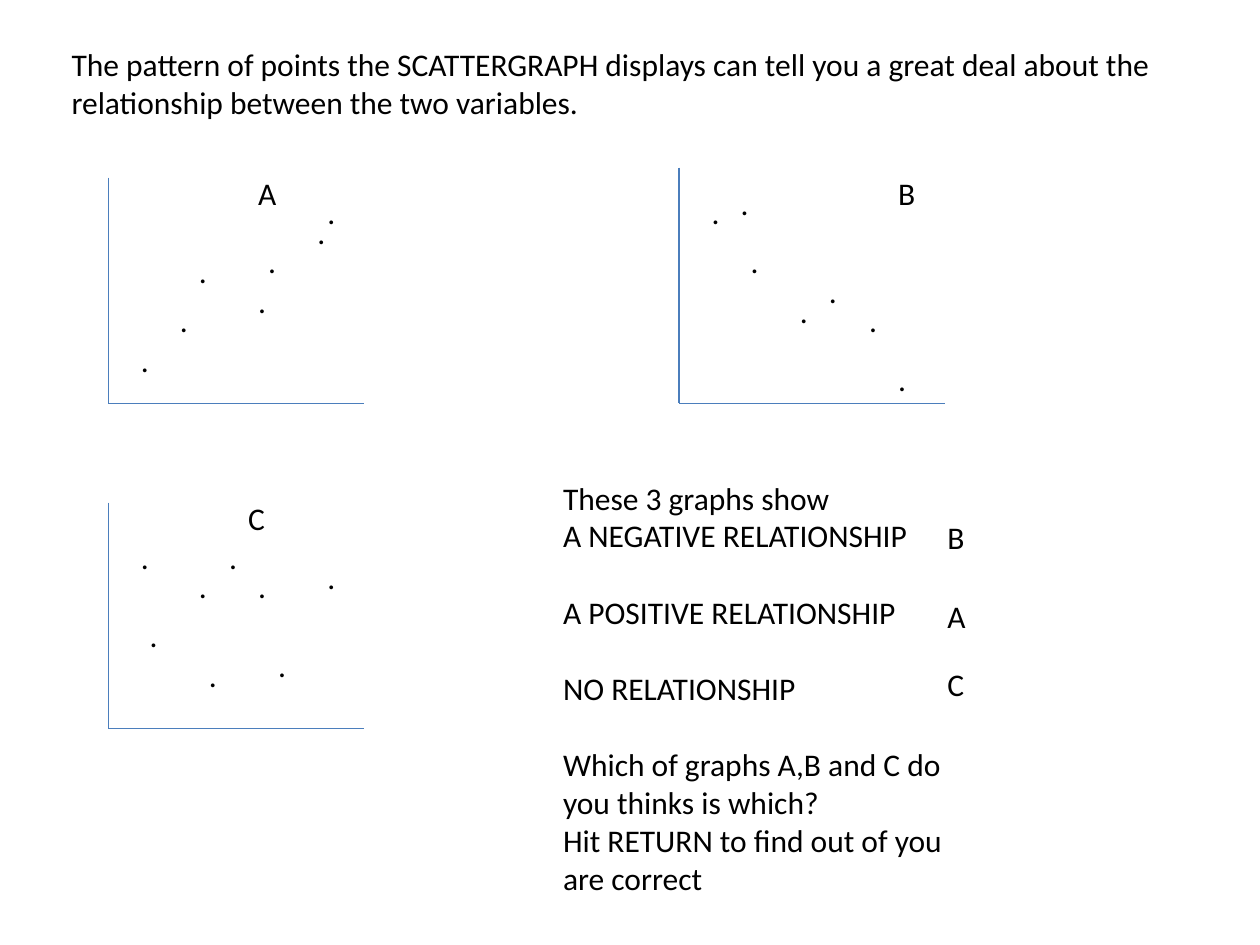
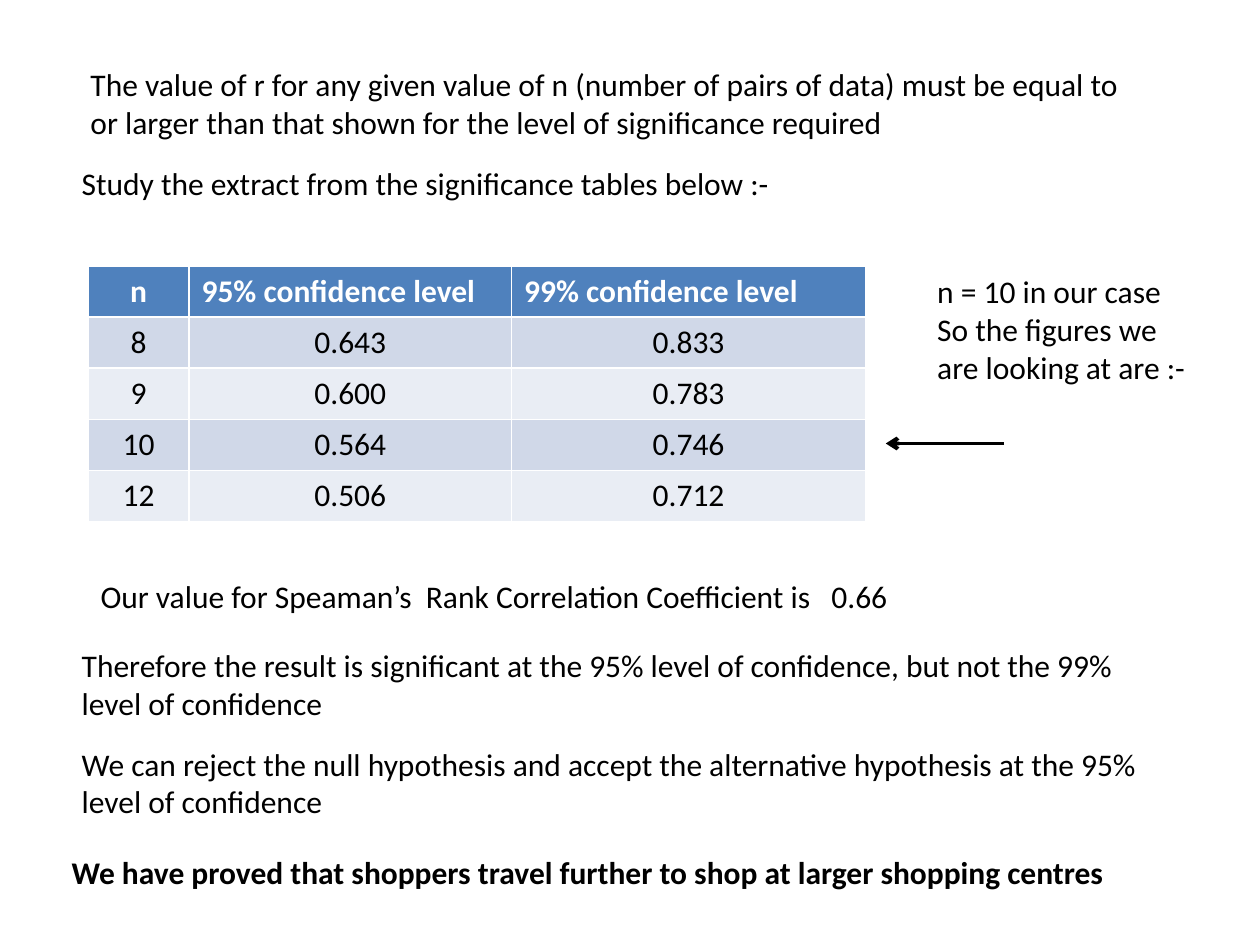
from lxml import etree
from pptx import Presentation
from pptx.dml.color import RGBColor
from pptx.enum.shapes import MSO_CONNECTOR
from pptx.enum.text import MSO_AUTO_SIZE, PP_ALIGN
from pptx.oxml.ns import qn
from pptx.util import Inches, Pt

STRAIGHT = MSO_CONNECTOR.STRAIGHT
FIT_SHAPE = MSO_AUTO_SIZE.SHAPE_TO_FIT_TEXT
LEFT, CENTER = PP_ALIGN.LEFT, PP_ALIGN.CENTER

COLORS = {
    "text": "000000",
    "axis": "4B7EBC",
    "header": "4F81BD",
    "header_text": "FFFFFF",
    "band_dark": "D0D8E8",
    "band_light": "E9EDF4",
}
FONT = "Calibri"
SIZE = 18
LINE_GAP = 22
LINE_H = 0.4
TWO_LINES_H = 0.71

GRAPHS = [
    {"label": ("A", 1.95, 1.33), "origin": (0.86, 3.2), "top": 1.41, "right": 2.89,
     "points": [(1.02, 2.66), (1.33, 2.34), (1.48, 1.95), (1.95, 2.19),
                (2.03, 1.87), (2.42, 1.64), (2.5, 1.48)]},
    {"label": ("B", 7.03, 1.33), "origin": (5.39, 3.2), "top": 1.33, "right": 7.5,
     "points": [(5.55, 1.48), (6.25, 2.27), (6.8, 2.34), (5.86, 1.87),
                (7.03, 2.81), (5.78, 1.41), (6.48, 2.11)]},
    {"label": ("C", 1.87, 3.91), "origin": (0.86, 5.78), "top": 3.99, "right": 2.89,
     "points": [(1.02, 4.22), (2.5, 4.38), (1.56, 5.16), (2.11, 5.08),
                (1.48, 4.45), (1.95, 4.45), (1.09, 4.84), (1.72, 4.22)]},
]
QUIZ = [
    ("These 3 graphs show", 0),
    ("A NEGATIVE RELATIONSHIP", 0),
    ("A POSITIVE RELATIONSHIP", LINE_GAP),
    ("NO RELATIONSHIP", LINE_GAP),
    ("Which of graphs A,B and C do you thinks is which?", LINE_GAP),
    ("Hit RETURN to find out of you are correct", 0),
]
ANSWERS = [("B", 4.06), ("A", 4.69), ("C", 5.23)]
SIGNIFICANCE = [
    ("n", "95% confidence level", "99% confidence level"),
    ("8", "0.643", "0.833"),
    ("9", "0.600", "0.783"),
    ("10", "0.564", "0.746"),
    ("12", "0.506", "0.712"),
]


class Deck:
    def __init__(self):
        self.prs = Presentation()
        self.prs.slide_width = Inches(10)
        self.prs.slide_height = Inches(7.5)
        self.s = None

    def slide(self):
        self.s = self.prs.slides.add_slide(self.prs.slide_layouts[6])

    def style(self, p, color="text", bold=False):
        for r in p.runs:
            r.font.name = FONT
            r.font.size = Pt(SIZE)
            r.font.bold = bold
            r.font.color.rgb = RGBColor.from_string(COLORS[color])

    def text(self, x, y, w, h, *lines, bold=False):
        sp = self.s.shapes.add_textbox(Inches(x), Inches(y), Inches(w), Inches(h))
        tf = sp.text_frame
        tf.word_wrap = True
        tf.auto_size = FIT_SHAPE
        tf.text = "\n".join(lines)
        for p in tf.paragraphs:
            self.style(p, bold=bold)
        return tf.paragraphs

    def line(self, start, end, color, width, arrow=False):
        points = [Inches(v) for v in (*start, *end)]
        sp = self.s.shapes.add_connector(STRAIGHT, *points)
        sp.line.color.rgb = RGBColor.from_string(COLORS[color])
        sp.line.width = Pt(width)
        if arrow:
            etree.SubElement(sp.line._get_or_add_ln(), qn("a:tailEnd"), type="arrow")
        etree.SubElement(sp._element.spPr, qn("a:effectLst"))

    def graph(self, label, origin, top, right, points):
        x, y = origin
        self.line((x, top), origin, "axis", 0.75)
        self.line(origin, (right, y), "axis", 0.75)
        name, label_x, label_y = label
        self.text(label_x, label_y, 0.39, LINE_H, name)
        for point_x, point_y in points:
            self.text(point_x, point_y, 0.23, LINE_H, ".")

    def table(self, x, y, h, widths, rows):
        size = [Inches(v) for v in (x, y, sum(widths), h)]
        table = self.s.shapes.add_table(len(rows), len(widths), *size).table
        for column, width in zip(table.columns, widths):
            column.width = Inches(width)
        for i, row in enumerate(rows):
            fill = "header" if i == 0 else "band_dark" if i % 2 else "band_light"
            for j, value in enumerate(row):
                cell = table.cell(i, j)
                cell.fill.solid()
                cell.fill.fore_color.rgb = RGBColor.from_string(COLORS[fill])
                cell.text_frame.text = value
                p = cell.text_frame.paragraphs[0]
                p.alignment = LEFT if i == 0 and j else CENTER
                self.style(p, "text" if i else "header_text", bold=i == 0)

    def tab_stop(self, p, x):
        tabs = etree.SubElement(p._p.get_or_add_pPr(), qn("a:tabLst"))
        etree.SubElement(tabs, qn("a:tab"), pos=str(Inches(x)), algn="l")


def scattergraphs(deck):
    deck.slide()
    deck.text(0.47, 0.31, 9.06, TWO_LINES_H,
              "The pattern of points the SCATTERGRAPH displays can tell you a great deal "
              "about the relationship between the two variables.")
    for graph in GRAPHS:
        deck.graph(**graph)
    quiz = deck.text(4.37, 3.75, 3.28, 3.43, *[line for line, gap in QUIZ])
    for p, (line, gap) in zip(quiz, QUIZ):
        p.space_before = Pt(gap)
    for letter, y in ANSWERS:
        deck.text(7.42, y, 0.47, LINE_H, letter)


def significance(deck):
    deck.slide()
    deck.text(0.62, 0.47, 8.36, TWO_LINES_H,
              "The value of r for any given value of n (number of pairs of data) must be "
              "equal to or larger than that shown for the level of significance required")
    deck.table(0.7, 2.11, 2.03, (0.8, 2.56, 2.81), SIGNIFICANCE)
    deck.text(0.55, 1.25, 6.72, LINE_H,
              "Study the extract from the significance tables below :-")
    deck.text(7.34, 2.11, 2.27, 1.01,
              "n = 10 in our case", "So the figures we are looking at are :-")
    deck.line((7.97, 3.52), (7.03, 3.52), "text", 2.25, arrow=True)
    result = deck.text(0.7, 4.53, 7.97, LINE_H,
                       "Our value for Speaman’s  Rank Correlation Coefficient is\t0.66")
    deck.tab_stop(result[0], 5.8)
    deck.text(0.55, 5.08, 8.52, TWO_LINES_H,
              "Therefore the result is significant at the 95% level of confidence, "
              "but not the 99% level of confidence")
    deck.text(0.55, 5.86, 8.59, TWO_LINES_H,
              "We can reject the null hypothesis and accept the alternative hypothesis "
              "at the 95% level of confidence")
    deck.text(0.47, 6.72, 8.91, LINE_H,
              "We have proved that shoppers travel further to shop at larger shopping centres",
              bold=True)


def main():
    deck = Deck()
    scattergraphs(deck)
    significance(deck)
    deck.prs.save("out.pptx")


if __name__ == "__main__":
    main()
